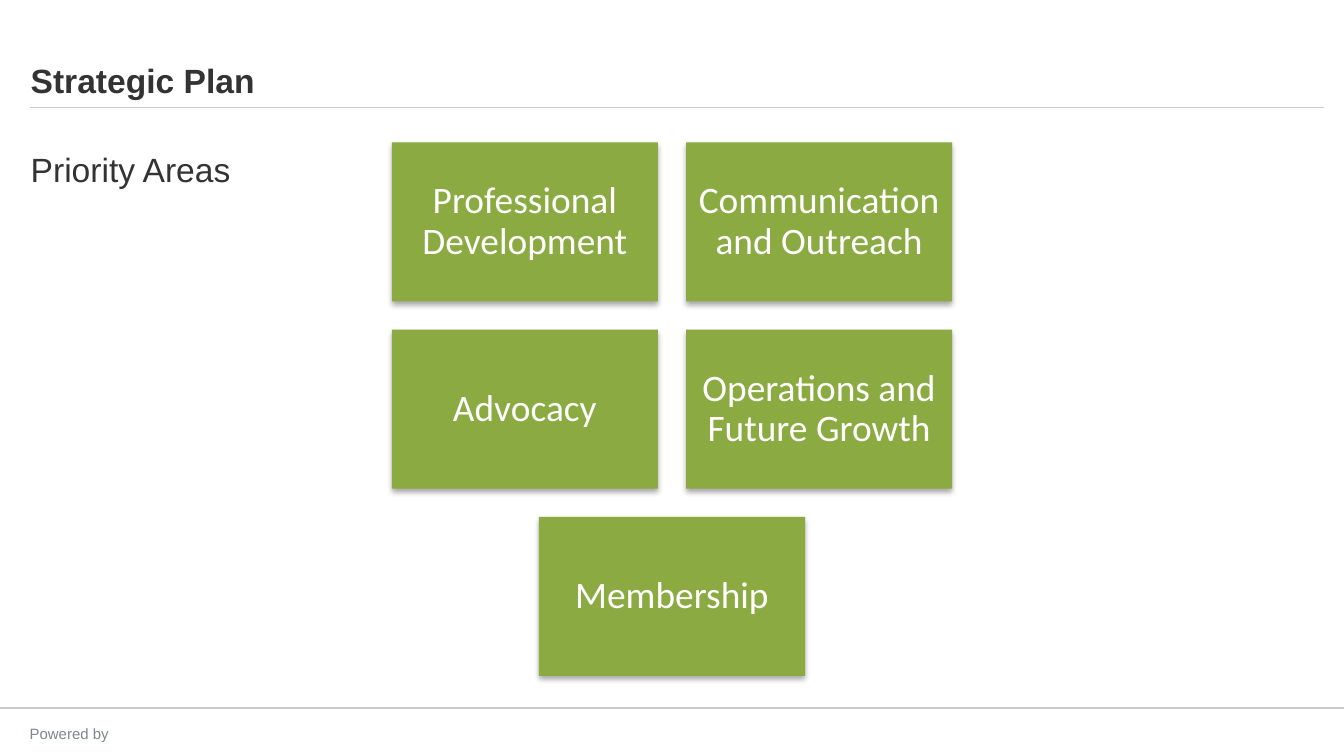
from lxml import etree
from pptx import Presentation, util as u
from pptx.dml.color import RGBColor
from pptx.enum import shapes, text
from pptx.oxml import ns

WIDE = u.Inches(10)
HIGH = WIDE * 9 // 16
INK, GREY, RULE, GREEN, WHITE = "333333", "7C878E", "CCCCCC", "8BAB42", "FFFFFF"
AREAS = [
    ["Professional Development", "Communication and Outreach"],
    ["Advocacy", "Operations and Future Growth"],
    ["Membership"],
]


def color(code):
    return RGBColor.from_string(code)


def share(left, top, width, height):
    return (int(WIDE * left / 100), int(HIGH * top / 100),
            int(WIDE * width / 100), int(HIGH * height / 100))


def style(para, size, tint, face="Arial", bold=False):
    font = para.font
    font.size, font.name, font.bold = u.Pt(size), face, bold
    font.color.rgb = color(tint)


def rule(slide, box, weight):
    x, y, w, h = box
    line = slide.shapes.add_connector(shapes.MSO_CONNECTOR.STRAIGHT, x, y, x + w, y + h)
    line.line.color.rgb = color(RULE)
    line.line.width = u.Pt(weight)
    etree.SubElement(line._element.spPr, ns.qn("a:effectLst"))


def label(slide, box, words, size, tint, bold=False,
          anchor=text.MSO_ANCHOR.TOP, align=text.PP_ALIGN.LEFT):
    frame = slide.shapes.add_textbox(*box).text_frame
    frame.word_wrap = True
    frame.vertical_anchor = anchor
    para = frame.paragraphs[0]
    para.text, para.alignment = words, align
    style(para, size, tint, bold=bold)


def shade(shape):
    shape.shadow.inherit = False
    effect = shape._element.spPr.find(ns.qn("a:effectLst"))
    outer = etree.SubElement(effect, ns.qn("a:outerShdw"), blurRad=str(u.Pt(3.1)),
                             dist=str(u.Pt(1.8)), dir="5400000", rotWithShape="0")
    tint = etree.SubElement(outer, ns.qn("a:srgbClr"), val="000000")
    etree.SubElement(tint, ns.qn("a:alpha"), val="35000")


def card(slide, box, words):
    shape = slide.shapes.add_shape(shapes.MSO_SHAPE.RECTANGLE, *box)
    shape.fill.solid()
    shape.fill.fore_color.rgb = color(GREEN)
    shape.line.fill.background()
    shade(shape)
    frame = shape.text_frame
    frame.word_wrap = True
    frame.vertical_anchor = text.MSO_ANCHOR.MIDDLE
    frame.margin_left = frame.margin_right = u.Inches(0.08)
    frame.margin_top = frame.margin_bottom = u.Inches(0.08)
    para = frame.paragraphs[0]
    para.text, para.alignment = words, text.PP_ALIGN.CENTER
    para.line_spacing = 0.9
    style(para, 20, WHITE, "Calibri")


def cards(slide, box, rows):
    x, y, w, h = box
    gap = int(w * 0.05)
    cols = max(map(len, rows))
    wide = (w - gap * (cols - 1)) // cols
    high = (h - gap * (len(rows) - 1)) // len(rows)
    for r, row in enumerate(rows):
        start = x + (cols - len(row)) * (wide + gap) // 2
        for c, words in enumerate(row):
            spot = start + c * (wide + gap), y + r * (high + gap), wide, high
            card(slide, spot, words)


def header(slide, box):
    x, y, w, h = box
    label(slide, (x, y, w, h), "Strategic Plan", 18, INK, True, text.MSO_ANCHOR.BOTTOM)
    rule(slide, (x + w // 100, y + h, int(w * 1.07), 0), 0.5)


def footer(slide, box):
    x, y, w, h = box
    rule(slide, (x, y, w, 0), 1)
    spot = x - int(w * 0.006), y + h // 5, int(w * 0.115), h // 2
    label(slide, spot, "Powered by", 8, GREY, align=text.PP_ALIGN.CENTER)


def main():
    deck = Presentation()
    deck.slide_width, deck.slide_height = WIDE, HIGH
    slide = deck.slides.add_slide(deck.slide_layouts[6])
    footer(slide, share(0, 93.69, 100, 6.31))
    header(slide, share(1.3, 6.4, 90, 7.8))
    label(slide, share(1.3, 18.84, 42.5, 5.16), "Priority Areas", 18, INK)
    cards(slide, share(29.15, 18.84, 41.7, 70.58), AREAS)
    deck.save("out.pptx")


if __name__ == "__main__":
    main()
